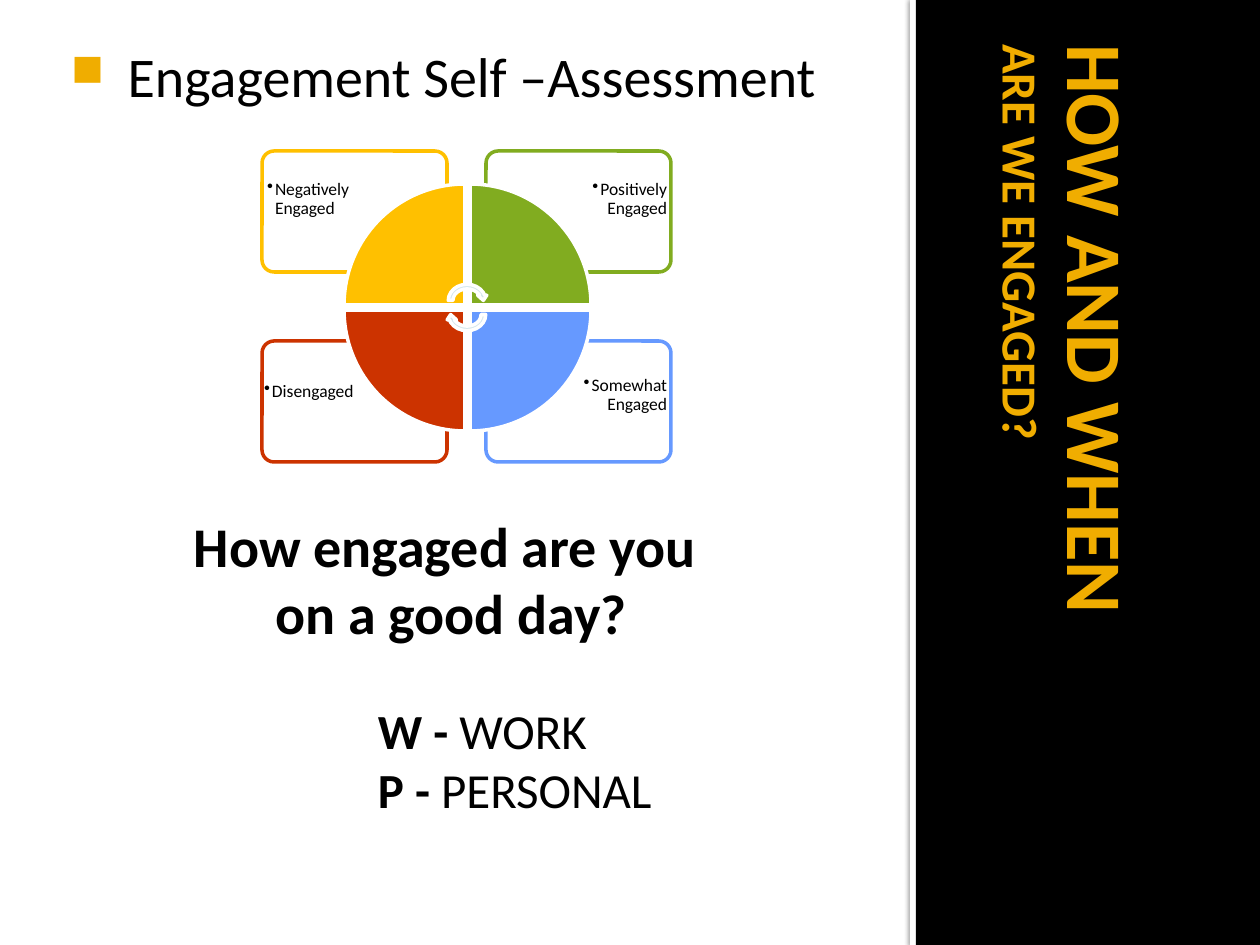
from lxml import etree
from pptx import Presentation
from pptx.dml.color import RGBColor
from pptx.enum.shapes import MSO_SHAPE
from pptx.enum.text import MSO_ANCHOR, MSO_AUTO_SIZE, PP_ALIGN
from pptx.oxml.ns import qn
from pptx.util import Emu, Pt

RECT, CARD = MSO_SHAPE.RECTANGLE, MSO_SHAPE.ROUNDED_RECTANGLE
WEDGE, ARROW = MSO_SHAPE.PIE_WEDGE, MSO_SHAPE.CIRCULAR_ARROW
LEFT, CENTER, RIGHT = PP_ALIGN.LEFT, PP_ALIGN.CENTER, PP_ALIGN.RIGHT
FONT = "Calibri"
AMBER, BLACK, WHITE = "F0AD00", "000000", "FFFFFF"
YELLOW, GREEN, BLUE, RED = "FFC000", "81AC20", "6699FF", "CC3300"


def px(n):
    return Emu(round(n * 914400 / 126))


def color(hex_code):
    return RGBColor.from_string(hex_code)


def add_block(slide, kind, box, fill, line=None, rotation=0):
    block = slide.shapes.add_shape(kind, *map(px, box))
    block.shadow.inherit = False
    block.rotation = rotation
    block.fill.solid()
    block.fill.fore_color.rgb = color(fill)
    if line:
        block.line.color.rgb = color(line)
        block.line.width = Pt(2)
    else:
        block.line.fill.background()
    return block


def add_text_area(slide, box, inset):
    frame = slide.shapes.add_textbox(*map(px, box)).text_frame
    frame.word_wrap = True
    frame.margin_left = frame.margin_right = px(inset)
    frame.margin_top = frame.margin_bottom = px(inset)
    return frame


def style(paragraph, size, align=LEFT, hue=BLACK, bold=None):
    paragraph.alignment = align
    font = paragraph.font
    font.name, font.size, font.bold = FONT, Pt(size), bold
    font.color.rgb = color(hue)


def set_indent(paragraph, margin, first=0):
    properties = paragraph._p.get_or_add_pPr()
    properties.set("marL", str(px(margin)))
    properties.set("indent", str(px(first)))
    return properties


def set_bullet(paragraph, char, margin, hue=None, percent=100):
    """Hang a bullet in front of the paragraph; its XML precedes defRPr."""
    properties = set_indent(paragraph, *margin)
    bullet = []
    if hue:
        tint = etree.Element(qn("a:buClr"))
        etree.SubElement(tint, qn("a:srgbClr"), val=hue)
        bullet.append(tint)
    bullet.append(etree.Element(qn("a:buSzPct"), val=str(percent * 1000)))
    bullet.append(etree.Element(qn("a:buChar"), char=char))
    default_run = properties.find(qn("a:defRPr"))
    for element in bullet:
        default_run.addprevious(element)


def add_side_panel(slide):
    strip = add_block(slide, RECT, (910, 0, 6, 945), WHITE)
    effects = strip._element.spPr.find(qn("a:effectLst"))
    shadow = etree.SubElement(effects, qn("a:outerShdw"), blurRad=str(Pt(2.5)),
                              dist=str(Pt(0.8)), dir="10800000")
    tint = etree.SubElement(shadow, qn("a:srgbClr"), val=BLACK)
    etree.SubElement(tint, qn("a:alpha"), val="60000")
    add_block(slide, RECT, (916, 0, 344, 945), BLACK)


def set_title(slide):
    title = slide.shapes.title
    slide.shapes._spTree.append(title._element)  # in front of the panel
    title.left, title.top, title.width, title.height = map(px, (935, 38, 262, 806))
    frame = title.text_frame
    frame.auto_size = MSO_AUTO_SIZE.NONE
    frame.vertical_anchor = MSO_ANCHOR.MIDDLE
    frame.margin_left = px(13)
    frame.margin_top = frame.margin_right = frame.margin_bottom = px(6)
    frame._txBody.bodyPr.set("vert", "eaVert")
    heading = frame.paragraphs[0]
    style(heading, 45, hue=AMBER, bold=True)
    heading.add_run().text = "HOW AND WHEN"
    heading.add_line_break()
    question = heading.add_run()
    question.text = "ARE WE ENGAGED?"
    question.font.size = Pt(28)


def add_body(slide):
    frame = add_text_area(slide, (42, 29, 806, 829), 13)
    heading = frame.paragraphs[0]
    heading.text = " Engagement Self –Assessment"
    style(heading, 32)
    set_bullet(heading, "■", (60, -44), AMBER, 80)

    for text, gap in (("How engaged are you", 402), (" on a good day?", 0)):
        question = frame.add_paragraph()
        question.text = text
        style(question, 32, CENTER, bold=True)
        question.space_before = px(gap)

    for letter, area, gap in (("W", "WORK", 55), ("P", "PERSONAL", 0)):
        key = frame.add_paragraph()
        style(key, 28)
        set_indent(key, 323)
        key.space_before = px(gap)
        initial = key.add_run()
        initial.text = f"{letter} - "
        initial.font.bold = True
        key.add_run().text = area


def add_card(slide, corner, hue):
    card = add_block(slide, CARD, (*corner, 185, 121), WHITE, hue)
    card.adjustments[0] = 0.1


def add_label(slide, text, corner, align):
    label = add_text_area(slide, (*corner, 130, 91), 5).paragraphs[0]
    label.text = text
    style(label, 10, align)
    label.line_spacing = 0.9
    set_bullet(label, "•", (8, -8))


def add_cycle(slide):
    # Clockwise from top left: hue, column, row, label and its place
    quadrants = (
        (YELLOW, 0, 0, "Negatively Engaged", (262, 175), LEFT),
        (GREEN, 1, 0, "Positively Engaged", (542, 175), RIGHT),
        (BLUE, 1, 1, "Somewhat Engaged", (542, 371), RIGHT),
        (RED, 0, 1, "Disengaged", (259, 377), LEFT),
    )
    for hue, column, row, text, corner, align in quadrants:
        add_card(slide, (262 + 224 * column, 151 + 190 * row), hue)
        add_label(slide, text, corner, align)
    for turn, (hue, column, row, *_) in enumerate(quadrants):
        box = (344 + 126 * column, 184 + 126 * row, 121, 121)
        add_block(slide, WEDGE, box, hue, WHITE, 90 * turn)
    # Arrows around the hub
    for top, rotation in ((282, 0), (296, 180)):
        add_block(slide, ARROW, (446, top, 42, 37), "D2E5EC", WHITE, rotation)


def main():
    deck = Presentation()
    deck.slide_width, deck.slide_height = px(1260), px(945)
    slide = deck.slides.add_slide(deck.slide_layouts[5])
    add_side_panel(slide)
    set_title(slide)
    add_body(slide)
    add_cycle(slide)
    deck.save("out.pptx")


if __name__ == "__main__":
    main()
